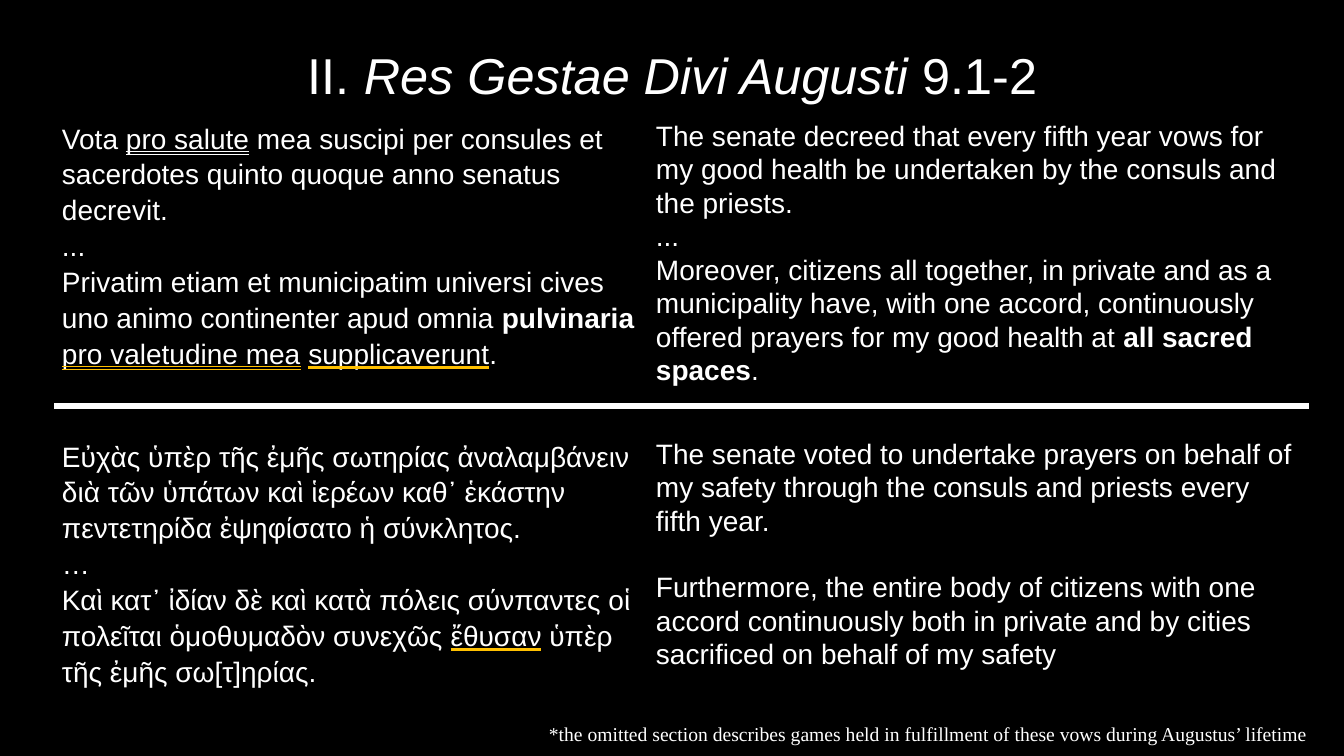
"""Build the slide on Res Gestae 9.1-2, with its Latin and Greek texts beside their translations."""

from dataclasses import dataclass
from typing import Optional

import lxml.etree
import pptx
import pptx.dml.color
import pptx.enum.text
import pptx.oxml.ns
import pptx.util

EMU_PER_PIXEL = 914400 / 100.8
Color = pptx.dml.color.RGBColor
Underline = pptx.enum.text.MSO_UNDERLINE
Anchor = pptx.enum.text.MSO_ANCHOR
Align = pptx.enum.text.PP_ALIGN


@dataclass(frozen=True)
class Theme:
    black: Color = Color(0x00, 0x00, 0x00)
    white: Color = Color(0xFF, 0xFF, 0xFF)
    gold: Color = Color(0xFF, 0xC0, 0x00)
    sans: str = "Arial"
    serif: str = "Times New Roman"
    title_size: int = 36
    body_size: int = 20
    note_size: int = 14
    thin_line: float = 1
    thick_line: float = 4.5


THEME = Theme()


@dataclass(frozen=True)
class Span:
    text: str
    bold: bool = False
    italic: bool = False
    underline: Optional[Underline] = None
    underline_color: Optional[Color] = None


@dataclass(frozen=True)
class Passage:
    paragraphs: list[list[Span]]
    line_spacing: float
    top_margin: int = 0
    last_gap: int = 0


COLUMN_WIDTHS = [594, 659]
ROW_HEIGHTS = [287, 327]
SIDE_MARGIN = 7
SOURCE_SPACING = 1.15
TRANSLATION_SPACING = 1.07
LOWER_MARGIN = 31

TITLE = [Span("II."), Span(" Res Gestae Divi Augusti ", italic=True), Span("9.1-2")]
NOTE = [Span("*the omitted section describes games held in fulfillment of these vows "
             "during Augustus’ lifetime")]

LATIN = Passage([
    [Span("Vota "),
     Span("pro salute", underline=Underline.DOUBLE_LINE),
     Span(" mea suscipi per consules et sacerdotes quinto quoque anno senatus decrevit.")],
    [Span("...")],
    [Span("Privatim etiam et municipatim universi cives uno animo continenter apud omnia "),
     Span("pulvinaria ", bold=True),
     Span("pro valetudine mea", underline=Underline.DOUBLE_LINE, underline_color=THEME.gold),
     Span(" "),
     Span("supplicaverunt", underline=Underline.HEAVY_LINE, underline_color=THEME.gold),
     Span(".")],
], SOURCE_SPACING)

LATIN_TRANSLATION = Passage([
    [Span("The senate decreed that every fifth year vows for my good health be undertaken "
          "by the consuls and the priests.")],
    [Span("...")],
    [Span("Moreover, citizens all together, in private and as a municipality have, with one "
          "accord, continuously offered prayers for my good health at "),
     Span("all sacred spaces", bold=True),
     Span(".")],
], TRANSLATION_SPACING)

GREEK = Passage([
    [Span("Εὐχὰς ὑπὲρ τῆς ἐμῆς σωτηρίας ἀναλαμβάνειν διὰ τῶν ὑπάτων καὶ ἱερέων καθ᾿ ἑκάστην "
          "πεντετηρίδα ἐψηφίσατο ἡ σύνκλητος.")],
    [Span("…")],
    [Span("Καὶ κατ᾿ ἰδίαν δὲ καὶ κατὰ πόλεις σύνπαντες οἱ πολεῖται ὁμοθυμαδὸν συνεχῶς "),
     Span("ἔθυσαν", underline=Underline.HEAVY_LINE, underline_color=THEME.gold),
     Span(" ὑπὲρ τῆς ἐμῆς σω[τ]ηρίας.")],
], SOURCE_SPACING, top_margin=LOWER_MARGIN)

GREEK_TRANSLATION = Passage([
    [Span("The senate voted to undertake prayers on behalf of my safety through the consuls "
          "and priests every fifth year.")],
    [Span("Furthermore, the entire body of citizens with one accord continuously both in "
          "private and by cities sacrificed on behalf of my safety")],
], TRANSLATION_SPACING, top_margin=LOWER_MARGIN, last_gap=33)

PASSAGES = [[LATIN, LATIN_TRANSLATION], [GREEK, GREEK_TRANSLATION]]


def px(length: int) -> pptx.util.Emu:
    return pptx.util.Emu(round(length * EMU_PER_PIXEL))


def add_solid_fill(parent: lxml.etree._Element, color: Color) -> None:
    fill = lxml.etree.SubElement(parent, pptx.oxml.ns.qn("a:solidFill"))
    lxml.etree.SubElement(fill, pptx.oxml.ns.qn("a:srgbClr"), val=str(color))


def add_text(paragraph, text: str, *, size: int, font: str, bold: bool = False,
             italic: bool = False, underline: Optional[Underline] = None,
             underline_color: Optional[Color] = None) -> None:
    run = paragraph.add_run()
    run.text = text
    run.font.size = pptx.util.Pt(size)
    run.font.bold = bold
    run.font.italic = italic
    run.font.underline = underline
    run.font.color.rgb = THEME.white
    if underline_color is not None:
        properties = run._r.get_or_add_rPr()
        add_solid_fill(lxml.etree.SubElement(properties, pptx.oxml.ns.qn("a:uFill")),
                       underline_color)
    run.font.name = font


def add_spans(paragraph, spans: list[Span], size: int, font: str) -> None:
    for span in spans:
        add_text(paragraph, span.text, size=size, font=font, bold=span.bold,
                 italic=span.italic, underline=span.underline,
                 underline_color=span.underline_color)


def add_border(cell, side: str, color: Color, width: float) -> None:
    line = lxml.etree.SubElement(cell._tc.get_or_add_tcPr(), pptx.oxml.ns.qn(f"a:ln{side}"),
                                 w=str(pptx.util.Pt(width)))
    add_solid_fill(line, color)


def fill_cell(cell, passage: Passage, divided_side: str) -> None:
    for side in "LRTB":
        if side == divided_side:
            add_border(cell, side, THEME.white, THEME.thick_line)
        else:
            add_border(cell, side, THEME.black, THEME.thin_line)
    cell.fill.solid()
    cell.fill.fore_color.rgb = THEME.black
    cell.margin_left = cell.margin_right = px(SIDE_MARGIN)
    cell.margin_top = px(passage.top_margin)
    cell.margin_bottom = 0
    cell.vertical_anchor = Anchor.TOP
    for index, spans in enumerate(passage.paragraphs):
        paragraph = cell.text_frame.add_paragraph() if index else cell.text_frame.paragraphs[0]
        paragraph.line_spacing = passage.line_spacing
        add_spans(paragraph, spans, THEME.body_size, THEME.sans)
    if passage.last_gap:
        paragraph.space_before = px(passage.last_gap)


def add_title(slide) -> None:
    title = slide.shapes.title
    title.left, title.top, title.width, title.height = px(93), px(23), px(1159), px(111)
    title.text_frame.auto_size = pptx.enum.text.MSO_AUTO_SIZE.NONE
    title.text_frame.vertical_anchor = Anchor.MIDDLE
    paragraph = title.text_frame.paragraphs[0]
    paragraph.alignment = Align.CENTER
    paragraph.line_spacing = 0.9
    add_spans(paragraph, TITLE, THEME.title_size, THEME.sans)


def add_passages(slide) -> None:
    table = slide.shapes.add_table(len(ROW_HEIGHTS), len(COLUMN_WIDTHS), px(55), px(119),
                                   px(sum(COLUMN_WIDTHS)), px(sum(ROW_HEIGHTS))).table
    table.first_row = table.horz_banding = False
    for column, width in zip(table.columns, COLUMN_WIDTHS):
        column.width = px(width)
    for row, height, passages, side in zip(table.rows, ROW_HEIGHTS, PASSAGES, "BT"):
        row.height = px(height)
        for cell, passage in zip(row.cells, passages):
            fill_cell(cell, passage, side)


def add_note(slide) -> None:
    note = slide.shapes.add_textbox(px(539), px(717), px(804), px(34))
    note.text_frame.word_wrap = True
    add_spans(note.text_frame.paragraphs[0], NOTE, THEME.note_size, THEME.serif)


def main() -> None:
    presentation = pptx.Presentation()
    presentation.slide_width, presentation.slide_height = px(1344), px(756)
    slide = presentation.slides.add_slide(presentation.slide_layouts[5])
    slide.background.fill.solid()
    slide.background.fill.fore_color.rgb = THEME.black
    add_title(slide)
    add_passages(slide)
    add_note(slide)
    presentation.save("out.pptx")


if __name__ == "__main__":
    main()
